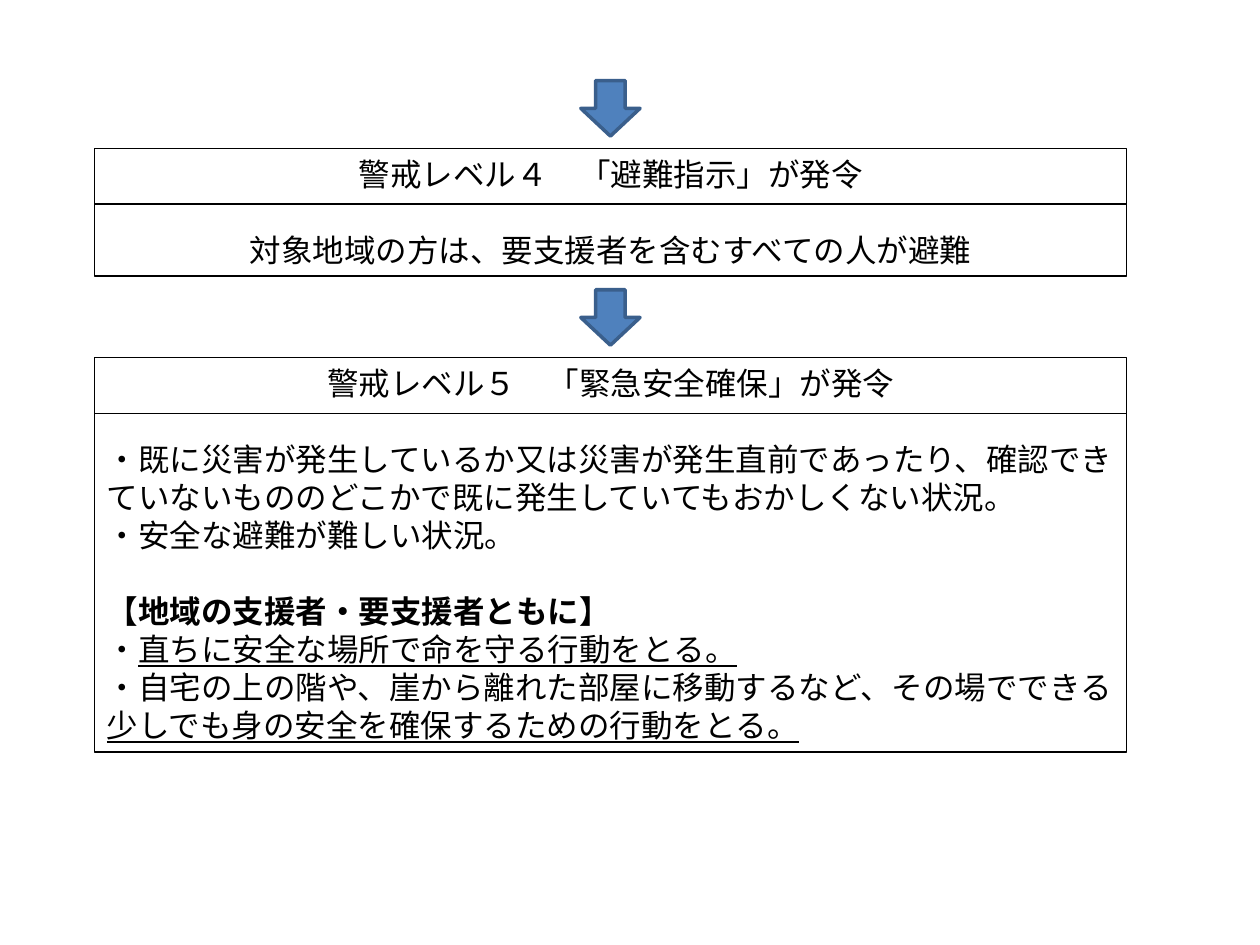
from pptx import Presentation
from pptx.dml.color import RGBColor
from pptx.enum.shapes import MSO_CONNECTOR, MSO_SHAPE
from pptx.enum.text import MSO_ANCHOR, PP_ALIGN
from pptx.oxml.ns import qn
from pptx.util import Inches, Pt

RECT, DOWN_ARROW = MSO_SHAPE.RECTANGLE, MSO_SHAPE.DOWN_ARROW
STRAIGHT = MSO_CONNECTOR.STRAIGHT
TOP = MSO_ANCHOR.TOP
LEFT, CENTER = PP_ALIGN.LEFT, PP_ALIGN.CENTER

COLORS = {"text": "000000", "border": "000000",
          "arrow": "4F81BD", "arrow_edge": "3A5F8C"}
LATIN, JAPANESE = "Calibri", "Noto Sans CJK JP"
HEADING = {"name": LATIN}
BODY = {"name": JAPANESE}
BOLD = {"name": LATIN, "bold": True}
UNDERLINED = {"name": JAPANESE, "underline": True}

BOX_LEFT, BOX_WIDTH = 0.75, 8.19
HEADING_HEIGHT = 0.44
ARROW_WIDTH, ARROW_HEIGHT = 0.47, 0.44
ARROW_RISE = 0.54  # from the arrow's top to the box it points at
SECTION_GAP = 22   # one text line, in points

# Each paragraph: alignment, space before, runs of (text, format)
LEVELS = [
    {"top": 1.18, "height": 1.01, "paragraphs": [
        (CENTER, 0, [("警戒レベル４　「避難指示」が発令", HEADING)]),
        (CENTER, SECTION_GAP,
         [("対象地域の方は、要支援者を含むすべての人が避難", BODY)]),
    ]},
    {"top": 2.84, "height": 3.13, "paragraphs": [
        (CENTER, 0, [("警戒レベル５　「緊急安全確保」が発令", HEADING)]),
        (LEFT, SECTION_GAP,
         [("・既に災害が発生しているか又は災害が発生直前であったり、確認できて"
           "いないもののどこかで既に発生していてもおかしくない状況。", BODY)]),
        (LEFT, 0, [("・安全な避難が難しい状況。", BODY)]),
        (LEFT, SECTION_GAP, [("【地域の支援者・要支援者ともに】", BOLD)]),
        (LEFT, 0, [("・", BODY),
                   ("直ちに安全な場所で命を守る行動をとる。", UNDERLINED)]),
        (LEFT, 0, [("・自宅の上の階や、崖から離れた部屋に移動するなど、その場でできる", BODY),
                   ("少しでも身の安全を確保するための行動をとる。", UNDERLINED)]),
    ]},
]


class SlideBuilder:
    """Holds the current slide and the style of its elements."""

    def __init__(self, slide, size=18):
        self.slide = slide
        self.size = Pt(size)

    def color(self, name):
        return RGBColor.from_string(COLORS[name])

    def outline(self, sp, color, width):
        sp.line.color.rgb = self.color(color)
        sp.line.width = Pt(width)

    def shape(self, kind, x, y, w, h):
        sp = self.slide.shapes.add_shape(
            kind, Inches(x), Inches(y), Inches(w), Inches(h))
        sp.shadow.inherit = False
        return sp

    def arrow(self, x, y):
        sp = self.shape(DOWN_ARROW, x, y, ARROW_WIDTH, ARROW_HEIGHT)
        sp.fill.solid()
        sp.fill.fore_color.rgb = self.color("arrow")
        self.outline(sp, "arrow_edge", 2)

    def divider(self, x, y, w):
        line = self.slide.shapes.add_connector(
            STRAIGHT, Inches(x), Inches(y), Inches(x + w), Inches(y))
        self.outline(line, "border", 0.75)
        sp_pr = line._element.spPr
        sp_pr.append(sp_pr.makeelement(qn("a:effectLst"), {}))

    def box(self, x, y, w, h, paragraphs):
        sp = self.shape(RECT, x, y, w, h)
        sp.fill.background()
        self.outline(sp, "border", 0.75)
        tf = sp.text_frame
        tf.word_wrap = True
        tf.vertical_anchor = TOP
        for i, (align, gap, runs) in enumerate(paragraphs):
            p = tf.add_paragraph() if i else tf.paragraphs[0]
            p.alignment = align
            p.space_before = Pt(gap)
            for text, style in runs:
                self.run(p, text, style)

    def run(self, p, text, style):
        r = p.add_run()
        r.text = text
        r.font.color.rgb = self.color("text")
        for key, value in {"size": self.size, **style}.items():
            setattr(r.font, key, value)


def main():
    prs = Presentation()
    prs.slide_width, prs.slide_height = Inches(10), Inches(7.5)
    s = SlideBuilder(prs.slides.add_slide(prs.slide_layouts[6]))
    arrow_left = BOX_LEFT + (BOX_WIDTH - ARROW_WIDTH) / 2
    for level in LEVELS:
        top = level["top"]
        s.arrow(arrow_left, top - ARROW_RISE)
        s.box(BOX_LEFT, top, BOX_WIDTH, level["height"], level["paragraphs"])
        s.divider(BOX_LEFT, top + HEADING_HEIGHT, BOX_WIDTH)
    prs.save("out.pptx")


if __name__ == "__main__":
    main()
